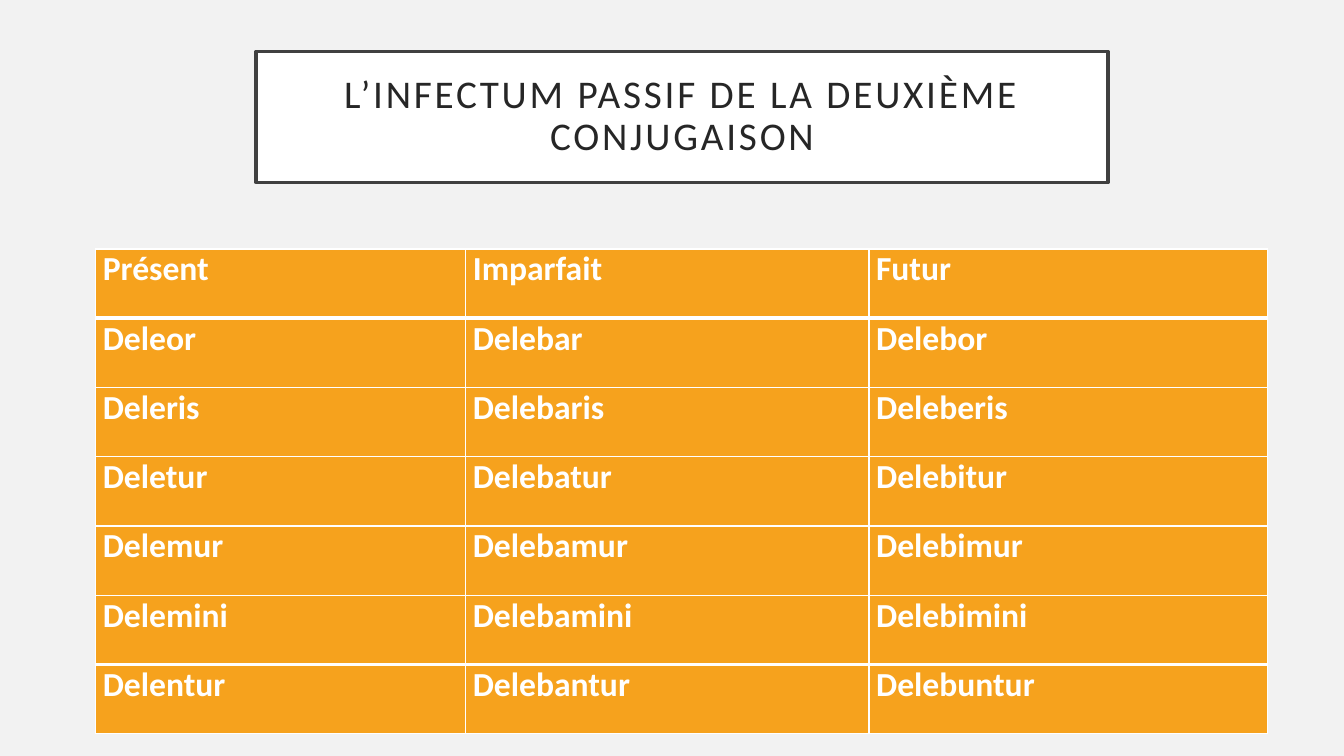
from pptx import Presentation
from pptx.dml.color import RGBColor
from pptx.enum.text import MSO_ANCHOR as Anchor, MSO_AUTO_SIZE as Fit, PP_ALIGN as Align
from pptx.oxml.ns import qn
from pptx.util import Inches, Pt
from lxml.etree import SubElement as Sub

WHITE = "FFFFFF"
ORANGE = "F6A21D"
VERBS = [
    ("Présent", "Imparfait", "Futur"),
    ("Deleor", "Delebar", "Delebor"),
    ("Deleris", "Delebaris", "Deleberis"),
    ("Deletur", "Delebatur", "Delebitur"),
    ("Delemur", "Delebamur", "Delebimur"),
    ("Delemini", "Delebamini", "Delebimini"),
    ("Delentur", "Delebantur", "Delebuntur"),
]


def paint(fill, color):
    fill.solid()
    fill.fore_color.rgb = RGBColor.from_string(color)


def write(frame, text, size, color, bold=False, align=Align.LEFT, space=1, track=0):
    """Set one formatted paragraph; track is letter spacing in points."""
    para = frame.paragraphs[0]
    para.alignment = align
    para.line_spacing = space
    run = para.add_run()
    run.text = text
    font = run.font
    font.name, font.size, font.bold = "Calibri", Pt(size), bold
    paint(font.fill, color)
    if track:
        font._element.set("spc", str(track * 100))


def edge(cell, side, width):
    line = Sub(cell._tc.get_or_add_tcPr(), qn("a:ln" + side), w=str(Pt(width)))
    Sub(Sub(line, qn("a:solidFill")), qn("a:srgbClr"), val=WHITE)


def add_title(slide, box, text):
    title = slide.shapes.title
    title.left, title.top, title.width, title.height = map(Inches, box)
    paint(title.fill, WHITE)
    paint(title.line.fill, "404040")
    title.line.width = Pt(2.5)
    frame = title.text_frame
    frame.word_wrap = True
    frame.auto_size = Fit.NONE
    frame.vertical_anchor = Anchor.MIDDLE
    frame.margin_left = frame.margin_right = Inches(0.2)
    frame.margin_top = frame.margin_bottom = Inches(0.2)
    write(frame, text, 28, "262626", align=Align.CENTER, space=0.9, track=2)


def add_verbs(slide, box, rows, shares):
    """Fill the box with a table; shares are the relative column widths."""
    left, top, width, height = box
    count = len(rows)
    table = slide.shapes.add_table(count, len(shares), *map(Inches, box)).table
    for col, share in zip(table.columns, shares):
        col.width = Inches(width * share / sum(shares))
    for r, words in enumerate(rows):
        table.rows[r].height = Inches(height / count)
        above = 3 if r in (1, count - 1) else 1
        below = 3 if r in (0, count - 2) else 1
        for c, word in enumerate(words):
            cell = table.cell(r, c)
            cell.margin_left = cell.margin_right = Inches(0.07)
            cell.margin_top = cell.margin_bottom = 0
            for side, line in zip("LRTB", (1, 1, above, below)):
                edge(cell, side, line)
            paint(cell.fill, ORANGE)
            write(cell.text_frame, word, 24, WHITE, bold=True)


def main():
    deck = Presentation()
    deck.slide_width, deck.slide_height = Inches(13.33), Inches(7.5)
    slide = deck.slides.add_slide(deck.slide_layouts[5])
    paint(slide.background.fill, "F2F2F2")
    add_title(slide, (2.54, 0.51, 8.45, 1.3),
              "L’INFECTUM PASSIF DE LA DEUXIÈME CONJUGAISON")
    add_verbs(slide, (0.95, 2.47, 11.62, 4.81), VERBS, (3.67, 4, 3.95))
    deck.save("out.pptx")


if __name__ == "__main__":
    main()
